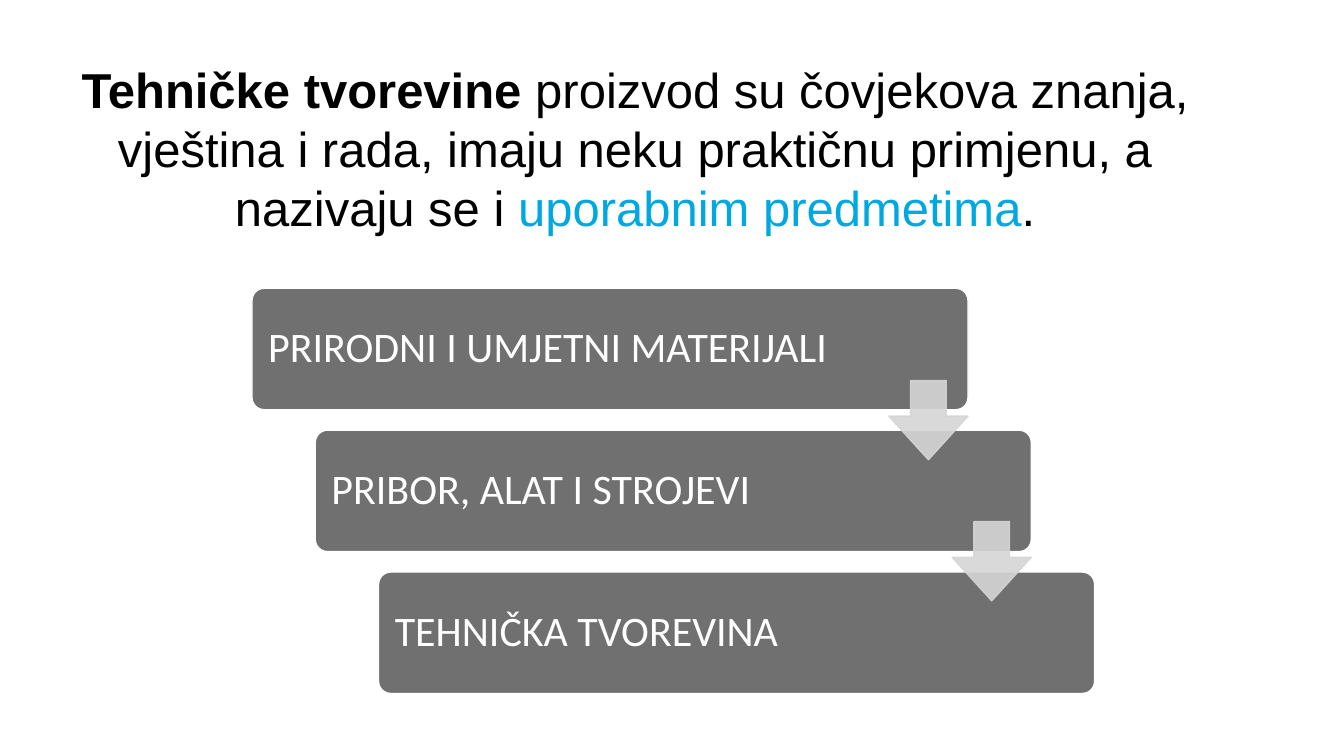
from dataclasses import dataclass

from lxml import etree
from pptx import Presentation
from pptx.dml.color import RGBColor
from pptx.enum.shapes import MSO_SHAPE
from pptx.enum.text import MSO_ANCHOR, PP_ALIGN
from pptx.oxml.ns import qn
from pptx.util import Cm, Pt

ROUND_RECT, DOWN_ARROW = MSO_SHAPE.ROUNDED_RECTANGLE, MSO_SHAPE.DOWN_ARROW
LEFT, CENTER = PP_ALIGN.LEFT, PP_ALIGN.CENTER
TOP, MIDDLE = MSO_ANCHOR.TOP, MSO_ANCHOR.MIDDLE

COLORS = {
    "black": "000000",
    "white": "FFFFFF",
    "blue": "00A8E0",
    "box": "707070",
    "arrow": "D5D5D5",
}

BOX_X, BOX_Y, BOX_W, BOX_H = 12.7, 14.53, 36.09, 6.12
STEP_X, STEP_Y = 3.19, 7.15
ARROW_SIZE, ARROW_DROP, ARROW_STEP_Y = 3.99, 4.65, 7.11


@dataclass(frozen=True)
class Run:
    text: str
    color: str = "black"
    bold: bool = False


TITLE = [
    Run("Tehničke tvorevine ", bold=True),
    Run("proizvod su čovjekova znanja, vještina i rada, imaju neku "
        "praktičnu primjenu, a nazivaju se i "),
    Run("uporabnim predmetima", color="blue"),
    Run("."),
]
STAGES = [
    "PRIRODNI I UMJETNI MATERIJALI",
    "PRIBOR, ALAT I STROJEVI",
    "TEHNIČKA TVOREVINA",
]


def rgb(name: str) -> RGBColor:
    """Return the named colour."""
    return RGBColor.from_string(COLORS[name])


def write(sp, runs: list[Run], *, font: str, size: int, inset: float,
          align=LEFT, anchor=TOP, spacing: float = 1.0) -> None:
    """Write one formatted paragraph into a shape."""
    tf = sp.text_frame
    tf.word_wrap = True
    tf.vertical_anchor = anchor
    tf.margin_left = tf.margin_right = Cm(inset)
    tf.margin_top = tf.margin_bottom = Cm(inset)
    p = tf.paragraphs[0]
    p.alignment = align
    p.line_spacing = spacing
    for run in runs:
        r = p.add_run()
        r.text = run.text
        r.font.name = font
        r.font.size = Pt(size)
        r.font.bold = run.bold
        r.font.color.rgb = rgb(run.color)


def add_block(s, preset, x: float, y: float, w: float, h: float, *,
              adjustments: list[float], fill: str, line: str, alpha: int = 100):
    """Add a filled and outlined preset shape."""
    sp = s.shapes.add_shape(preset, Cm(x), Cm(y), Cm(w), Cm(h))
    sp.shadow.inherit = False
    for i, value in enumerate(adjustments):
        sp.adjustments[i] = value
    sp.fill.solid()
    sp.fill.fore_color.rgb = rgb(fill)
    sp.line.color.rgb = rgb(line)
    sp.line.width = Pt(2)
    if alpha < 100:
        for color in sp.fill._xPr.iter(qn("a:srgbClr")):
            etree.SubElement(color, qn("a:alpha"), val=str(alpha * 1000))
    return sp


def main() -> None:
    """Build the slide and save it."""
    prs = Presentation()
    prs.slide_width, prs.slide_height = Cm(67.74), Cm(38.1)
    s = prs.slides.add_slide(prs.slide_layouts[6])

    title = s.shapes.add_textbox(Cm(2), Cm(2.87), Cm(60.02), Cm(9.25))
    write(title, TITLE, font="Arial", size=70, inset=0.13, align=CENTER)

    for i, stage in enumerate(STAGES):
        sp = add_block(s, ROUND_RECT, BOX_X + i * STEP_X, BOX_Y + i * STEP_Y,
                       BOX_W, BOX_H, adjustments=[0.1], fill="box", line="white")
        write(sp, [Run(stage, color="white")], font="Calibri", size=60,
              inset=0.64, anchor=MIDDLE, spacing=0.9)

    for i in range(len(STAGES) - 1):
        add_block(s, DOWN_ARROW, BOX_X + BOX_W - ARROW_SIZE + i * STEP_X,
                  BOX_Y + ARROW_DROP + i * ARROW_STEP_Y, ARROW_SIZE, ARROW_SIZE,
                  adjustments=[0.45, 0.55], fill="arrow", line="arrow", alpha=90)

    prs.save("out.pptx")


if __name__ == "__main__":
    main()
